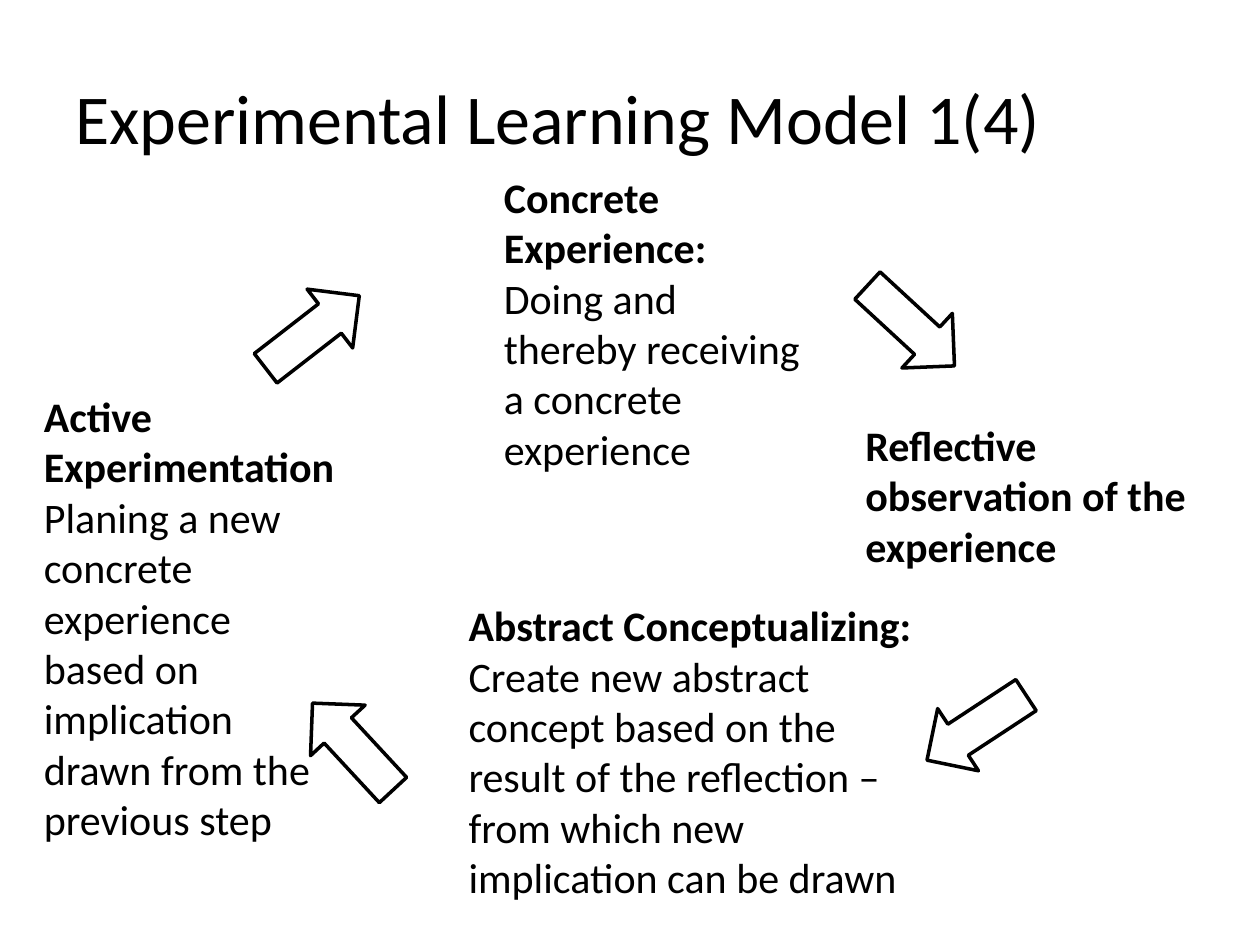
from pptx import Presentation
from pptx.dml.color import RGBColor
from pptx.enum.shapes import MSO_SHAPE
from pptx.enum.text import MSO_ANCHOR
from pptx.util import Inches, Pt

ARROW = MSO_SHAPE.RIGHT_ARROW
TOP, MIDDLE = MSO_ANCHOR.TOP, MSO_ANCHOR.MIDDLE
HUES = {"ink": "000000", "paper": "FFFFFF"}
INK, PAPER = (RGBColor.from_string(HUES[name]) for name in ("ink", "paper"))
FONT = {"name": "Calibri"}

deck = Presentation()
deck.slide_width, deck.slide_height = Inches(10), Inches(7.5)
slide = deck.slides.add_slide(deck.slide_layouts[6])


def add_text(box, lines, size, anchor=TOP):
    """Add a wrapped text box; lines holds (text, bold) pairs."""
    frame = slide.shapes.add_textbox(*map(Inches, box)).text_frame
    frame.word_wrap = True
    frame.vertical_anchor = anchor
    for i, (text, bold) in enumerate(lines):
        para = frame.add_paragraph() if i else frame.paragraphs[0]
        run = para.add_run()
        run.text = text
        for key, value in {**FONT, "size": Pt(size), "bold": bold}.items():
            setattr(run.font, key, value)
        run.font.color.rgb = INK


add_text((0.5, 0.3, 9, 1.25), [("Experimental Learning Model 1(4)", False)], 40, MIDDLE)

# Stages of the cycle, clockwise from the top: box, heading, detail
stages = [
    ((3.9, 1.31, 2.59, 2.52), "Concrete Experience:",
     "Doing and thereby receiving a concrete experience"),
    ((6.77, 3.28, 3.16, 1.31), "Reflective observation of the experience", None),
    ((3.62, 4.71, 3.85, 2.83), "Abstract Conceptualizing:",
     "Create new abstract concept based on the result of the reflection – "
     "from which new implication can be drawn"),
    ((0.25, 3.05, 2.54, 3.74), "Active Experimentation",
     "Planing a new concrete experience based on implication "
     "drawn from the previous step"),
]
for box, head, detail in stages:
    lines = [(head, True)]
    if detail:
        lines.append((detail, False))
    add_text(box, lines, 24)

# Arrows between the stages: left, top, turn in degrees
arrows = [(2.01, 2.34, 322.2), (6.76, 2.29, 42.7), (7.28, 5.48, 146.7), (2.33, 5.63, 227.2)]
for left, top, turn in arrows:
    arrow = slide.shapes.add_shape(ARROW, *map(Inches, (left, top, 0.94, 0.59)))
    arrow.rotation = turn
    arrow.shadow.inherit = False
    arrow.fill.solid()
    arrow.fill.fore_color.rgb = PAPER
    arrow.line.color.rgb = INK
    arrow.line.width = Pt(2)

deck.save("out.pptx")
